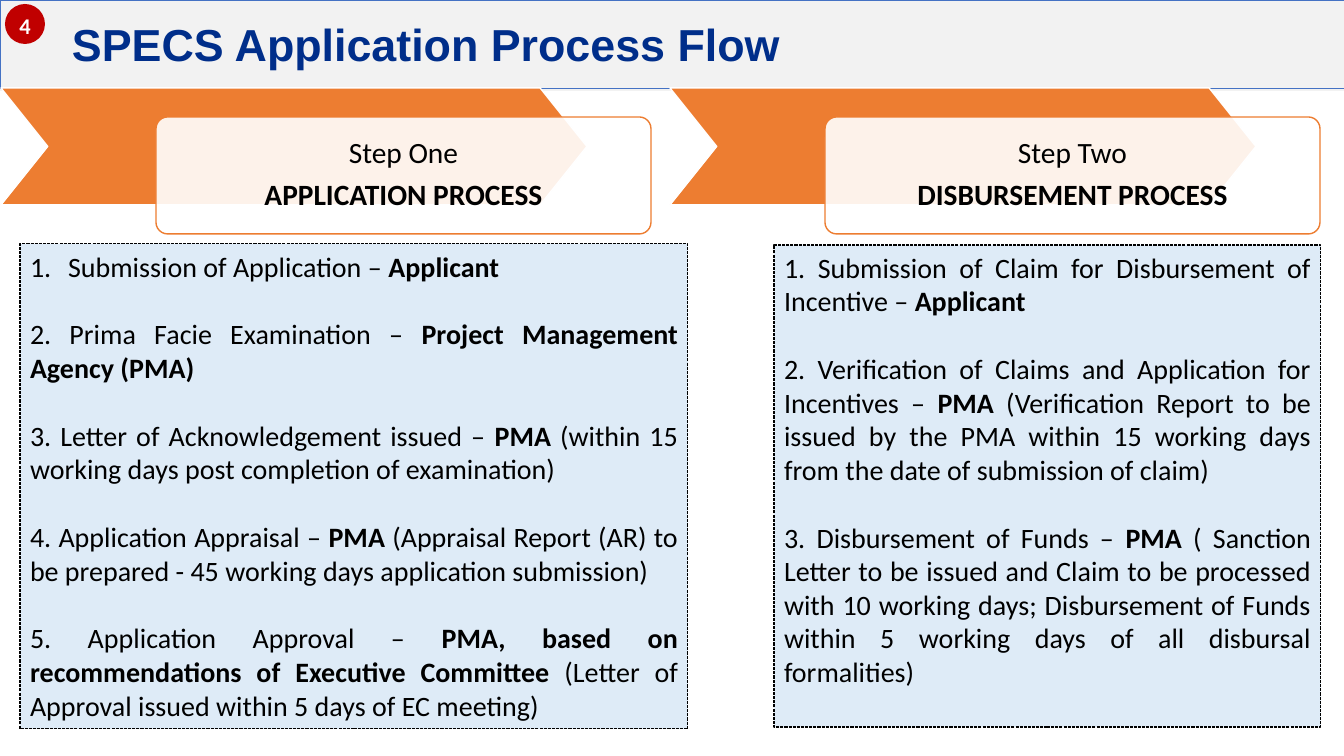
from lxml import etree
from pptx import Presentation
from pptx.dml.color import RGBColor
from pptx.enum.dml import MSO_LINE
from pptx.enum.shapes import MSO_SHAPE
from pptx.enum.text import MSO_ANCHOR, MSO_AUTO_SIZE, PP_ALIGN
from pptx.oxml.ns import qn
from pptx.util import Pt

WIDTH, HEIGHT = 1344, 756
EMU_PER_PX = 12192000 / WIDTH
RECT, OVAL = MSO_SHAPE.RECTANGLE, MSO_SHAPE.OVAL
CHEVRON, ROUNDED = MSO_SHAPE.CHEVRON, MSO_SHAPE.ROUNDED_RECTANGLE
LEFT, CENTER, JUSTIFY = PP_ALIGN.LEFT, PP_ALIGN.CENTER, PP_ALIGN.JUSTIFY
TOP, MIDDLE = MSO_ANCHOR.TOP, MSO_ANCHOR.MIDDLE
NO_AUTOFIT = MSO_AUTO_SIZE.NONE
DASH = MSO_LINE.SQUARE_DOT
COLORS = {
    "band": "F2F2F2", "title": "002E8A", "title_line": "4472C4",
    "accent": "ED7D31", "panel": "DEEBF7", "badge": "C00000",
    "white": "FFFFFF", "black": "000000",
}

# Each item: plain lead, bold part, plain rest
APPLICATION_ITEMS = [
    ("Submission of Application – ", "Applicant", ""),
    ("2. Prima Facie Examination – ", "Project Management Agency (PMA)", ""),
    ("3. Letter of Acknowledgement issued – ", "PMA",
     " (within 15 working days post completion of examination)"),
    ("4. Application Appraisal – ", "PMA",
     " (Appraisal Report (AR) to be prepared - 45 working days application submission)"),
    ("5. Application Approval – ",
     "PMA, based on recommendations of Executive Committee ",
     "(Letter of Approval issued within 5 days of EC meeting)"),
]
DISBURSEMENT_ITEMS = [
    ("1. Submission of Claim for Disbursement of Incentive – ", "Applicant", ""),
    ("2. Verification of Claims and Application for Incentives – ", "PMA",
     " (Verification Report to be issued by the PMA within 15 working days"
     " from the date of submission of claim)"),
    ("3. Disbursement of Funds – ", "PMA",
     " ( Sanction Letter to be issued and Claim to be processed with 10 working days;"
     " Disbursement of Funds within 5 working days of all disbursal formalities)"),
]


def px(length):
    return round(length * EMU_PER_PX)


def color(name):
    return RGBColor.from_string(COLORS[name])


def place(shape, box):
    shape.left, shape.top, shape.width, shape.height = map(px, box)


def paint(shape, fill=None, line=None, weight=1):
    if fill:
        shape.fill.solid()
        shape.fill.fore_color.rgb = color(fill)
    else:
        shape.fill.background()
    if line:
        shape.line.color.rgb = color(line)
        shape.line.width = Pt(weight)
    else:
        shape.line.fill.background()


def add_preset(page, preset, box, **look):
    shape = page.shapes.add_shape(preset, *map(px, box))
    shape.shadow.inherit = False
    paint(shape, **look)
    return shape


def set_frame(shape, anchor, sides, ends):
    frame = shape.text_frame
    frame.word_wrap = True
    frame.auto_size = NO_AUTOFIT
    frame.vertical_anchor = anchor
    frame.margin_left = frame.margin_right = px(sides)
    frame.margin_top = frame.margin_bottom = px(ends)
    return frame


def style(para, align, size, ink, face="Calibri", bold=None):
    para.alignment = align
    font = para.font
    font.name, font.size, font.bold = face, Pt(size), bold
    font.color.rgb = color(ink)


def set_marker(para, hang=0):
    """Give the paragraph a hanging automatic number, or no marker when hang is 0."""
    props = para._p.get_or_add_pPr()
    props.set("marL", str(px(hang)))
    props.set("indent", str(-px(hang)))
    if hang:
        etree.SubElement(props, qn("a:buFont"), typeface="+mj-lt")
        etree.SubElement(props, qn("a:buAutoNum"), type="arabicPeriod")
    else:
        etree.SubElement(props, qn("a:buNone"))


def add_header(page, box):
    left, top, width, height = box
    band = add_preset(page, RECT, (left, top, width, height + 3), fill="band")
    page.shapes._spTree.insert(2, band._element)  # behind the title
    title = page.shapes.title
    place(title, box)
    paint(title, line="title_line", weight=0.5)
    frame = set_frame(title, MIDDLE, 10, 5)
    frame.margin_left = px(72)
    frame.text = "SPECS Application Process Flow"
    style(frame.paragraphs[0], LEFT, 32, "title", "Arial", True)


def add_step(page, box, step, name):
    """Draw a chevron with a translucent card over its lower right."""
    left, top, width, height = box
    chevron = add_preset(page, CHEVRON, (left, top, width - 64, height - 29),
                         fill="accent", line="white")
    chevron.adjustments[0] = 0.4
    card = add_preset(page, ROUNDED, (left + 155, top + 29, width - 155, height - 29),
                      fill="white", line="accent")
    card.adjustments[0] = 0.1
    fill_color = card.fill._xPr.find(qn("a:solidFill"))[0]
    etree.SubElement(fill_color, qn("a:alpha"), val="90000")
    frame = set_frame(card, MIDDLE, 16, 16)
    frame.text = f"{step}\n{name}"
    for para, bold in zip(frame.paragraphs, (False, True)):
        para.line_spacing = 0.9
        para.space_after = Pt(7.35)
        style(para, CENTER, 21, "black", bold=bold)


def fill_panel(panel, box, items, first_hang=0):
    place(panel, box)
    paint(panel, "panel", "black", 0.75)
    panel.line.dash_style = DASH
    frame = set_frame(panel, TOP, 10, 5)
    for number, parts in enumerate(items):
        para = frame.add_paragraph() if number else frame.paragraphs[0]
        set_marker(para, 0 if number else first_hang)
        para.space_before = Pt(24.4 if number else 0)
        style(para, JUSTIFY, 20, "black")
        for text, bold in zip(parts, (False, True, False)):
            if text:
                span = para.add_run()
                span.text = text
                span.font.bold = bold


def add_badge(page, box, number):
    badge = add_preset(page, OVAL, box, fill="badge")
    frame = set_frame(badge, MIDDLE, 0, 0)
    frame.text = number
    para = frame.paragraphs[0]
    para.line_spacing = 1.14
    style(para, CENTER, 16, "white", bold=True)


def main():
    deck = Presentation()
    deck.slide_width, deck.slide_height = px(WIDTH), px(HEIGHT)
    page = deck.slides.add_slide(deck.slide_layouts.get_by_name("Two Content"))
    add_header(page, (0, 0, WIDTH, 88))
    add_step(page, (1, 88, 650, 146), "Step One", "APPLICATION PROCESS")
    add_step(page, (670, 88, 650, 146), "Step Two", "DISBURSEMENT PROCESS")
    fill_panel(page.placeholders[1], (20, 244, 668, 485), APPLICATION_ITEMS, 38)
    fill_panel(page.placeholders[2], (774, 245, 547, 482), DISBURSEMENT_ITEMS)
    add_badge(page, (5, 4, 40, 40), "4")
    deck.save("out.pptx")


if __name__ == "__main__":
    main()
